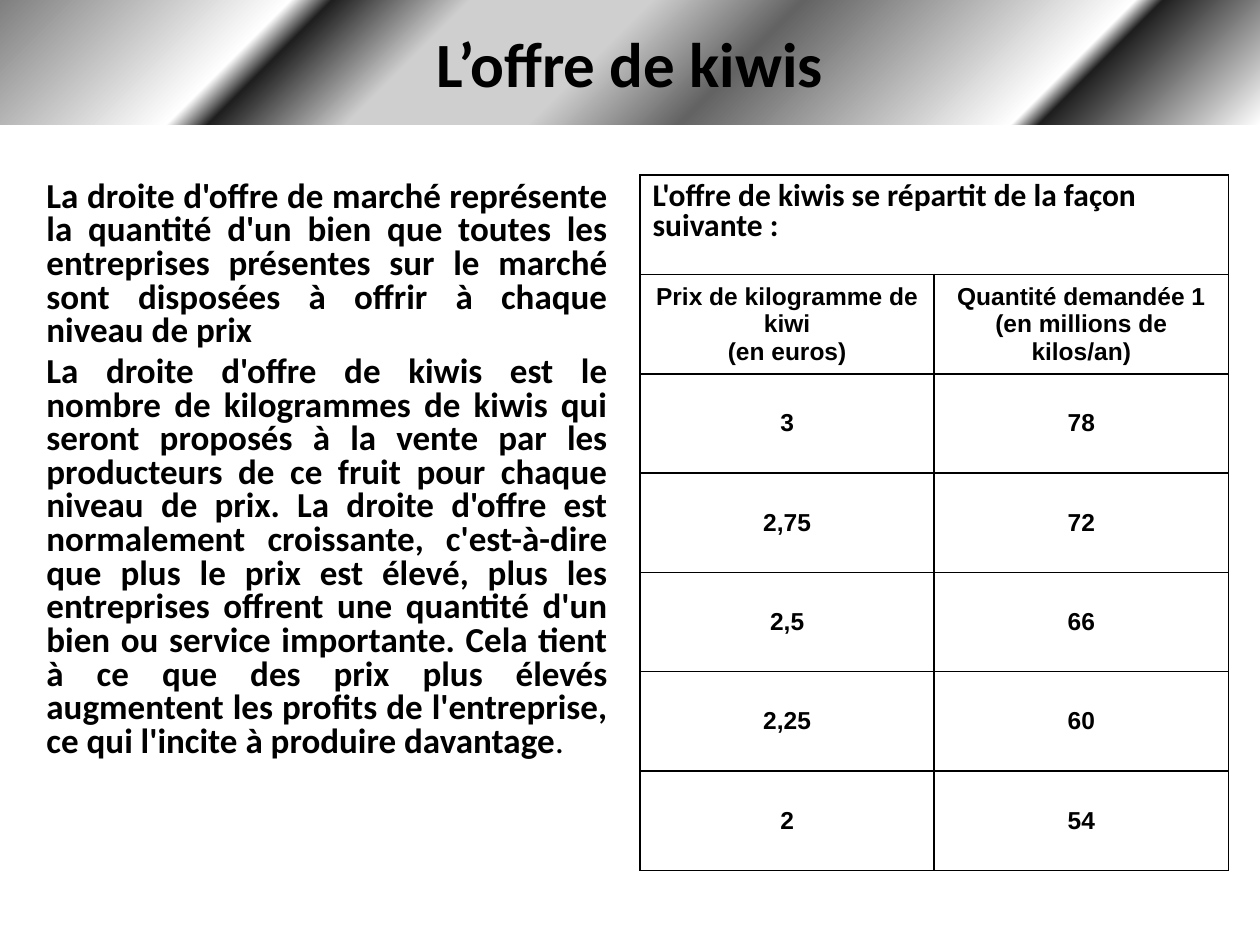
from lxml import etree
from pptx import Presentation
from pptx.dml.color import RGBColor
from pptx.enum.shapes import MSO_SHAPE
from pptx.enum.text import MSO_ANCHOR, PP_ALIGN
from pptx.oxml.ns import qn
from pptx.util import Inches, Pt

RECTANGLE = MSO_SHAPE.RECTANGLE
TOP, MIDDLE = MSO_ANCHOR.TOP, MSO_ANCHOR.MIDDLE
LEFT, CENTER, JUSTIFY = PP_ALIGN.LEFT, PP_ALIGN.CENTER, PP_ALIGN.JUSTIFY
BLACK = "000000"

TITLE = "L’offre de kiwis"
EXPLANATION = [
    [("La droite d'offre de marché représente la quantité d'un bien que toutes les "
      "entreprises présentes sur le marché sont disposées à offrir à chaque niveau de prix", True)],
    [("La droite d'offre de kiwis est le nombre de kilogrammes de kiwis qui seront proposés "
      "à la vente par les producteurs de ce fruit pour chaque niveau de prix. La droite d'offre "
      "est normalement croissante, c'est-à-dire que plus le prix est élevé, plus les entreprises "
      "offrent une quantité d'un bien ou service importante. Cela tient à ce que des prix plus "
      "élevés augmentent les profits de l'entreprise, ce qui l'incite à produire davantage", True),
     (".", False)],
]
TABLE_TITLE = "L'offre de kiwis se répartit de la façon suivante :"
TABLE_ROWS = [
    (["Prix de kilogramme de kiwi", "(en euros)"],
     ["Quantité demandée 1", "(en millions de kilos/an)"]),
    (["3"], ["78"]),
    (["2,75"], ["72"]),
    (["2,5"], ["66"]),
    (["2,25"], ["60"]),
    (["2"], ["54"]),
]
BANNER_STOPS = [(0, "FFFFFF"), (16, "1F1F1F"), (18, "FFFFFF"), (42, "636363"), (53, "CFCFCF"),
                (66, "CFCFCF"), (76, "1F1F1F"), (79, "FFFFFF"), (100, "7F7F7F")]

WIDTH, HEIGHT = 10, 7.5
BANNER_BOX = (0, 0, WIDTH, 0.99)
TEXT_BOX = (0.27, 1.39, 4.65, 5.51)
TABLE_BOX = (5.08, 1.39, 4.67, 5.52)

TITLE_FORMAT = {"size": Pt(36), "name": "Calibri"}
BODY_FORMAT = {"size": Pt(20), "name": "Calibri"}
TABLE_TITLE_FORMAT = {"size": Pt(18), "name": "Calibri"}
CELL_FORMAT = {"size": Pt(14), "name": "Arial"}
TIGHT = {"line_spacing": 0.8}
CELL_MARGINS = {"margin_left": Inches(0.07), "margin_right": Inches(0.07),
                "margin_top": 0, "margin_bottom": 0}


def color(value):
    return RGBColor.from_string(value)


def inches(box):
    return [Inches(length) for length in box]


def set_all(target, values):
    for name, value in values.items():
        setattr(target, name, value)


def write(frame, paragraphs, font_format, paragraph_format):
    for index, runs in enumerate(paragraphs):
        paragraph = frame.add_paragraph() if index else frame.paragraphs[0]
        set_all(paragraph, paragraph_format)
        for text, bold in runs:
            run = paragraph.add_run()
            run.text = text
            set_all(run.font, {**font_format, "bold": bold})
            run.font.color.rgb = color(BLACK)


def fill_gradient(shape, stops, angle):
    shape.fill.gradient()
    shape.fill.gradient_angle = angle
    stop_list = shape.fill._xPr.find(".//" + qn("a:gsLst"))
    for stop in list(stop_list):
        stop_list.remove(stop)
    for position, value in stops:
        stop = etree.SubElement(stop_list, qn("a:gs"), pos=str(position * 1000))
        etree.SubElement(stop, qn("a:srgbClr"), val=value)


def style_cell(cell):
    properties = cell._tc.get_or_add_tcPr()
    for side in ("lnL", "lnR", "lnT", "lnB"):
        line = etree.SubElement(properties, qn("a:" + side), w=str(Pt(1)))
        fill = etree.SubElement(line, qn("a:solidFill"))
        etree.SubElement(fill, qn("a:srgbClr"), val=BLACK)
    cell.fill.background()


def add_banner(slide):
    banner = slide.shapes.add_shape(RECTANGLE, *inches(BANNER_BOX))
    banner.shadow.inherit = False
    banner.line.fill.background()
    fill_gradient(banner, BANNER_STOPS, 135)
    banner.text_frame.vertical_anchor = MIDDLE
    write(banner.text_frame, [[(TITLE, True)]], TITLE_FORMAT, {"alignment": CENTER})


def add_explanation(slide):
    frame = slide.shapes.add_textbox(*inches(TEXT_BOX)).text_frame
    set_all(frame, {"word_wrap": True, "vertical_anchor": TOP})
    write(frame, EXPLANATION, BODY_FORMAT,
          {**TIGHT, "alignment": JUSTIFY, "space_before": Pt(4)})


def add_supply_table(slide):
    row_count, column_count = len(TABLE_ROWS) + 1, len(TABLE_ROWS[0])
    table = slide.shapes.add_table(row_count, column_count, *inches(TABLE_BOX)).table
    set_all(table, {"first_row": False, "horz_banding": False})
    for column in table.columns:
        column.width = Inches(TABLE_BOX[2] / column_count)
    for row in table.rows:
        row.height = Inches(TABLE_BOX[3] / row_count)
    for cell in table.iter_cells():
        style_cell(cell)
    heading = table.cell(0, 0)
    heading.merge(table.cell(0, column_count - 1))
    write(heading.text_frame, [[(TABLE_TITLE, True)]], TABLE_TITLE_FORMAT,
          {**TIGHT, "alignment": LEFT})
    for row_index, row in enumerate(TABLE_ROWS, start=1):
        for column_index, lines in enumerate(row):
            cell = table.cell(row_index, column_index)
            set_all(cell, {**CELL_MARGINS, "vertical_anchor": MIDDLE})
            write(cell.text_frame, [[(line, True)] for line in lines], CELL_FORMAT,
                  {"alignment": CENTER})


def main():
    presentation = Presentation()
    set_all(presentation, {"slide_width": Inches(WIDTH), "slide_height": Inches(HEIGHT)})
    slide = presentation.slides.add_slide(presentation.slide_layouts[6])
    add_banner(slide)
    add_explanation(slide)
    add_supply_table(slide)
    presentation.save("out.pptx")


if __name__ == "__main__":
    main()
